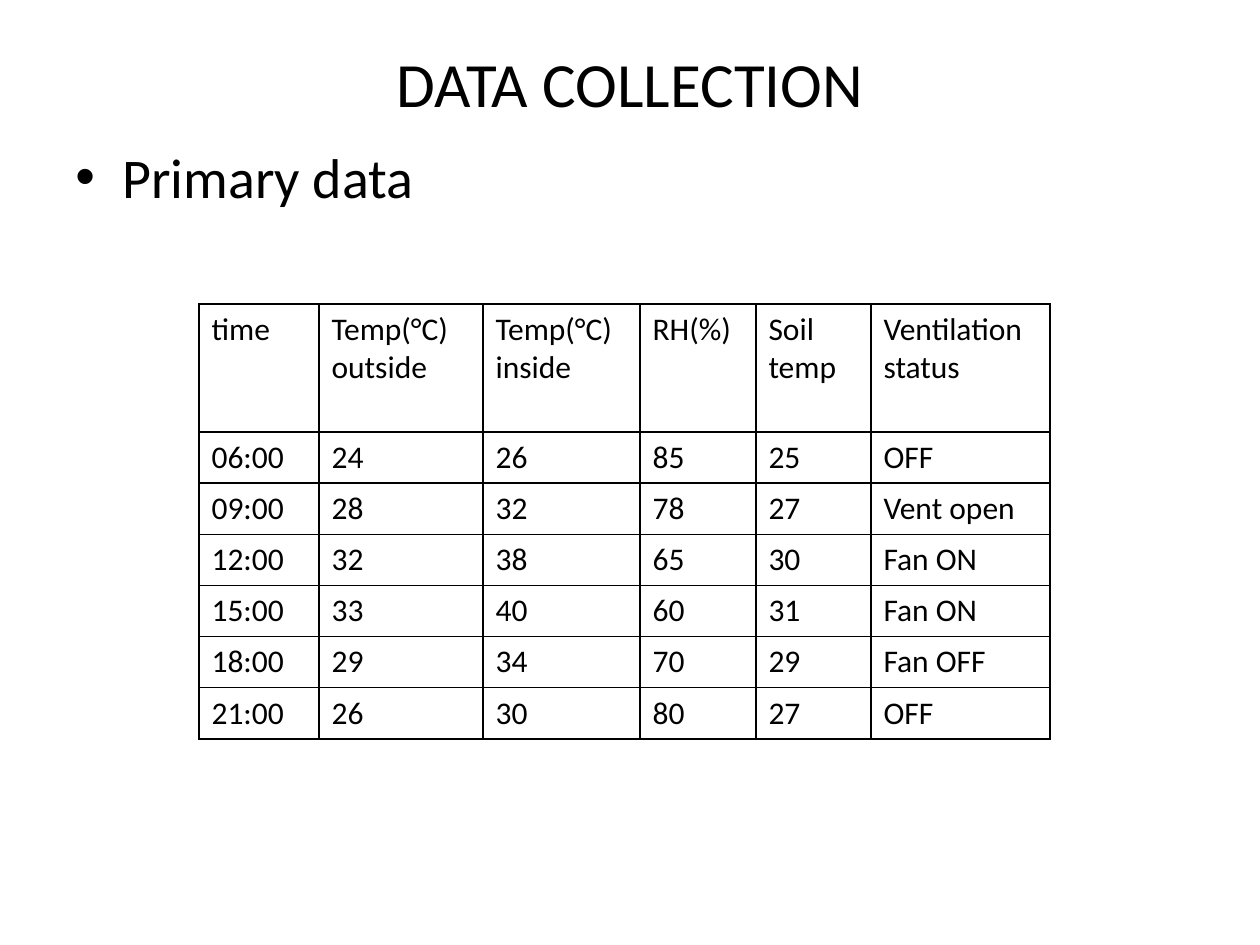
from lxml.etree import SubElement
from pptx import Presentation
from pptx.dml.color import RGBColor
from pptx.enum.text import MSO_ANCHOR, PP_ALIGN
from pptx.oxml.ns import qn
from pptx.util import Emu, Pt

FONT = "Calibri"
BLACK = "000000"
READINGS = [
    ["time", "Temp(°C)\noutside", "Temp(°C)\ninside", "RH(%)", "Soil\ntemp", "Ventilation status"],
    ["06:00", "24", "26", "85", "25", "OFF"],
    ["09:00", "28", "32", "78", "27", "Vent open"],
    ["12:00", "32", "38", "65", "30", "Fan ON"],
    ["15:00", "33", "40", "60", "31", "Fan ON"],
    ["18:00", "29", "34", "70", "29", "Fan OFF"],
    ["21:00", "26", "30", "80", "27", "OFF"],
]
COLUMN_WIDTHS = [120, 164, 157, 116, 115, 179]
HEADER_HEIGHT = 128


def px(length):
    return Emu(round(length * 914400 / 126))


def color(value):
    return RGBColor.from_string(value)


def format_text(frame, size):
    for paragraph in frame.paragraphs:
        for run in paragraph.runs:
            run.font.name = FONT
            run.font.size = Pt(size)
            run.font.color.rgb = color(BLACK)


def place_title(slide, left, top, width, height):
    title = slide.shapes.title
    title.left, title.top = px(left), px(top)
    title.width, title.height = px(width), px(height)
    frame = title.text_frame
    frame.text = "DATA COLLECTION"
    frame.vertical_anchor = MSO_ANCHOR.MIDDLE
    frame.paragraphs[0].alignment = PP_ALIGN.CENTER
    format_text(frame, 36)


def add_bullet(slide, left, top, width, height):
    frame = slide.shapes.add_textbox(px(left), px(top), px(width), px(height)).text_frame
    frame.word_wrap = True
    frame.text = "Primary data"
    properties = frame.paragraphs[0]._p.get_or_add_pPr()
    properties.set("marL", str(px(47)))
    properties.set("indent", str(px(-47)))
    SubElement(properties, qn("a:buFont"), typeface="Arial")
    SubElement(properties, qn("a:buChar"), char="•")
    format_text(frame, 32)


def add_borders(cell):
    properties = cell._tc.get_or_add_tcPr()
    for side in ("a:lnL", "a:lnR", "a:lnT", "a:lnB"):
        line = SubElement(properties, qn(side), w=str(Pt(1)))
        SubElement(SubElement(line, qn("a:solidFill")), qn("a:srgbClr"), val=BLACK)


def add_readings(slide, left, top, width, height):
    rows, columns = len(READINGS), len(COLUMN_WIDTHS)
    table = slide.shapes.add_table(
        rows, columns, px(left), px(top), px(width), px(height)).table
    table.first_row = table.horz_banding = False
    for column, share in zip(table.columns, COLUMN_WIDTHS):
        column.width = px(width * share / sum(COLUMN_WIDTHS))
    for index, row in enumerate(table.rows):
        row.height = px((height - HEADER_HEIGHT) / (rows - 1) if index else HEADER_HEIGHT)
        for cell, text in zip(row.cells, READINGS[index]):
            cell.text_frame.text = text
            format_text(cell.text_frame, 18)
            add_borders(cell)
            cell.fill.background()


def main():
    presentation = Presentation()
    presentation.slide_width, presentation.slide_height = px(1260), px(945)
    slide = presentation.slides.add_slide(presentation.slide_layouts[5])
    place_title(slide, 63, 38, 1134, 88)
    add_bullet(slide, 63, 136, 1134, 708)
    add_readings(slide, 199, 304, 851, 435)
    presentation.save("out.pptx")


if __name__ == "__main__":
    main()
